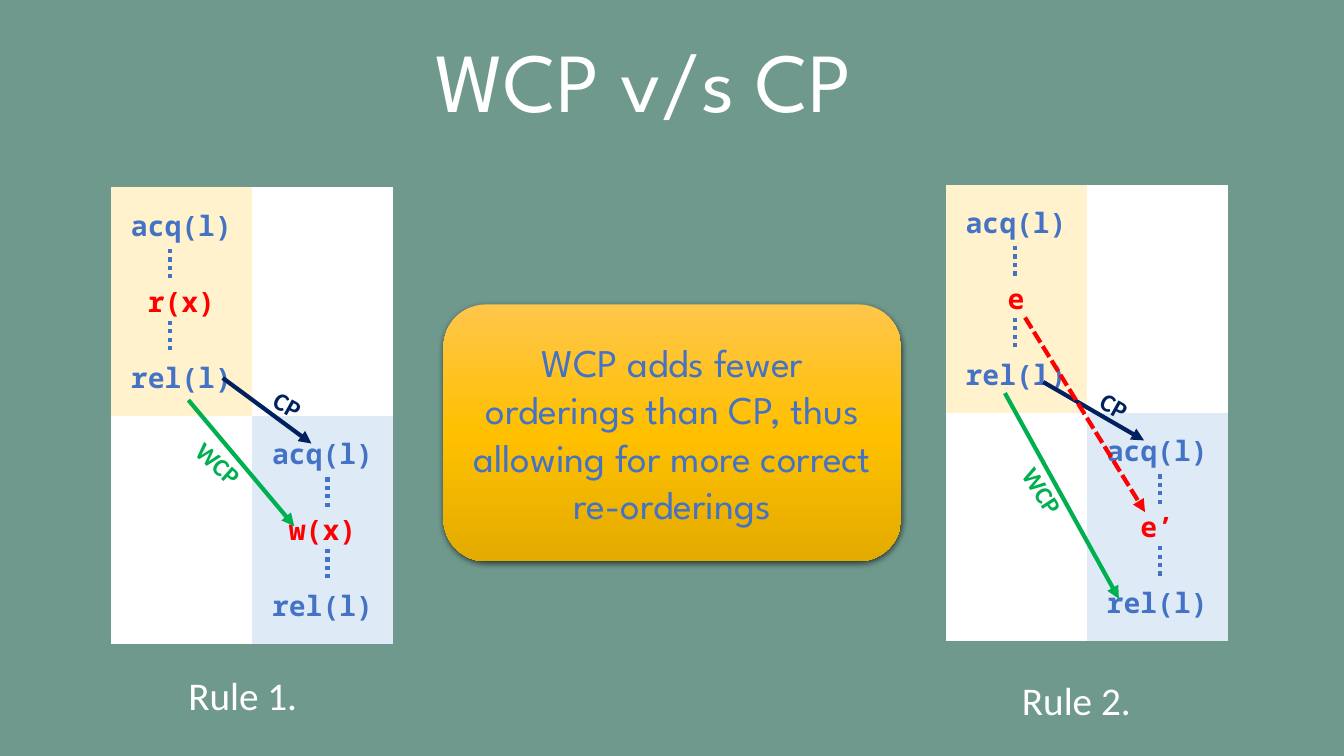
from dataclasses import dataclass

from lxml import etree
from pptx import Presentation
from pptx.dml.color import RGBColor
from pptx.enum.dml import MSO_LINE
from pptx.enum.shapes import MSO_CONNECTOR, MSO_SHAPE
from pptx.enum.text import MSO_ANCHOR, MSO_AUTO_SIZE, PP_ALIGN
from pptx.oxml import parse_xml
from pptx.oxml.ns import nsdecls, qn
from pptx.slide import Slide
from pptx.util import Pt

STRAIGHT = MSO_CONNECTOR.STRAIGHT
ROUNDED = MSO_SHAPE.ROUNDED_RECTANGLE
DOTTED, DASHED = MSO_LINE.ROUND_DOT, MSO_LINE.SQUARE_DOT
MIDDLE, CENTER = MSO_ANCHOR.MIDDLE, PP_ALIGN.CENTER
NO_FIT = MSO_AUTO_SIZE.NONE

SAGE = RGBColor(0x70, 0x99, 0x8D)
WHITE = RGBColor(0xFF, 0xFF, 0xFF)
CREAM = RGBColor(0xFF, 0xF2, 0xCC)
PALE_BLUE = RGBColor(0xDE, 0xEB, 0xF7)
BLUE = RGBColor(0x44, 0x72, 0xC4)
NAVY = RGBColor(0x00, 0x20, 0x60)
GREEN = RGBColor(0x00, 0xB0, 0x50)
RED = RGBColor(0xFF, 0x00, 0x00)

HEADING_FONT, LABEL_FONT, CODE_FONT = "League Spartan", "Calibri", "Noto Sans Mono"
COLUMN_WIDTH, ROW_HEIGHT = 100.8, 54.36
DOTS_TOP, DOTS_STEP, DOTS_LENGTH = 44, 51.2, 24
THREAD_ROWS = 3
NO_GRID_STYLE = "{2D5ABB26-0587-4C30-8999-92F81FD0307C}"


@dataclass
class Arrow:
    start: tuple[float, float]
    end: tuple[float, float]
    color: RGBColor
    dash: MSO_LINE | None = None


@dataclass
class Label:
    text: str
    left: float
    top: float
    width: float
    color: RGBColor
    size: float = 18
    height: float = 28.8
    rotation: float = 0
    bold: bool = True


@dataclass
class Rule:
    left: float
    top: float
    accesses: tuple[str, str]
    dots_x: tuple[float, float]
    arrows: list[Arrow]
    labels: list[Label]


RULES = [
    Rule(79.2, 133.9, ("r(x)", "w(x)"), (121.7, 234),
         [Arrow((134.6, 285.8), (210.2, 375.8), GREEN),
          Arrow((159.1, 270), (222.5, 316.8), NAVY)],
         [Label("WCP", 131, 317.5, 51.8, GREEN, rotation=41.4),
          Label("CP", 188.6, 275.8, 38.2, NAVY, rotation=29.2),
          Label("Rule 1.", 127.4, 475.9, 106.6, WHITE, 28, 41, bold=False)]),
    Rule(675.4, 131.8, ("e", "e’"), (725, 828.7),
         [Arrow((717.8, 280.8), (799.2, 427.7), GREEN),
          Arrow((745.2, 272.9), (817.2, 314.6), NAVY),
          Arrow((732.2, 226.8), (817.9, 365.8), RED, DASHED)],
         [Label("WCP", 719.3, 337, 51.8, GREEN, rotation=56.9),
          Label("CP", 779, 276.5, 38.2, NAVY, rotation=29.2),
          Label("Rule 2.", 722.9, 479.5, 106.6, WHITE, 28, 41, bold=False)]),
]


def style(para, font: str, size: float, color: RGBColor, bold: bool = False) -> None:
    para.font.name, para.font.size, para.font.bold = font, Pt(size), bold
    para.font.color.rgb = color


def add_line(page: Slide, start: tuple[float, float], end: tuple[float, float],
             color: RGBColor, dash: MSO_LINE | None = None, head: bool = False) -> None:
    line = page.shapes.add_connector(STRAIGHT, *(Pt(v) for v in start + end))
    line.line.color.rgb, line.line.width = color, Pt(3)
    if dash is not None:
        line.line.dash_style = dash
    if head:
        etree.SubElement(line.line._get_or_add_ln(), qn("a:tailEnd"), type="triangle")
    etree.SubElement(line._element.spPr, qn("a:effectLst"))


def add_label(page: Slide, label: Label) -> None:
    box = page.shapes.add_textbox(
        Pt(label.left), Pt(label.top), Pt(label.width), Pt(label.height))
    box.rotation = label.rotation
    box.text_frame.word_wrap = False
    para = box.text_frame.paragraphs[0]
    para.text = label.text
    style(para, LABEL_FONT, label.size, label.color, label.bold)


def add_trace(page: Slide, rule: Rule) -> None:
    row_count = 2 * THREAD_ROWS
    frame = page.shapes.add_table(row_count, 2, Pt(rule.left), Pt(rule.top),
                                  Pt(2 * COLUMN_WIDTH), Pt(row_count * ROW_HEIGHT))
    table = frame.table
    table.first_row = table.horz_banding = False
    table._tbl.tblPr.find(qn("a:tableStyleId")).text = NO_GRID_STYLE
    for column in table.columns:
        column.width = Pt(COLUMN_WIDTH)
    for index, row in enumerate(table.rows):
        row.height = Pt(ROW_HEIGHT)
        thread, step = divmod(index, THREAD_ROWS)
        for column, cell in enumerate(row.cells):
            cell.fill.solid()
            cell.fill.fore_color.rgb = WHITE
            if column != thread:
                continue
            cell.fill.fore_color.rgb = (CREAM, PALE_BLUE)[thread]
            cell.vertical_anchor = MIDDLE
            para = cell.text_frame.paragraphs[0]
            para.text = ("acq(l)", rule.accesses[thread], "rel(l)")[step]
            para.alignment = CENTER
            style(para, CODE_FONT, 20, RED if step == 1 else BLUE, True)


def add_rule(page: Slide, rule: Rule) -> None:
    add_trace(page, rule)
    # Dots between the events of each thread
    for thread, x in enumerate(rule.dots_x):
        for gap in range(THREAD_ROWS - 1):
            y = rule.top + DOTS_TOP + thread * THREAD_ROWS * ROW_HEIGHT + gap * DOTS_STEP
            add_line(page, (x, y), (x, y + DOTS_LENGTH), BLUE, DOTTED)
    # Orderings and captions
    for arrow in rule.arrows:
        add_line(page, arrow.start, arrow.end, arrow.color, arrow.dash, head=True)
    for label in rule.labels:
        add_label(page, label)


def add_title(page: Slide) -> None:
    title = page.shapes.title
    title.left, title.top, title.width, title.height = Pt(46), Pt(8.6), Pt(828), Pt(104.4)
    title.text_frame.auto_size = NO_FIT
    title.text_frame.vertical_anchor = MIDDLE
    para = title.text_frame.paragraphs[0]
    para.text = "WCP v/s CP"
    para.alignment, para.line_spacing = CENTER, 0.9
    style(para, HEADING_FONT, 60, WHITE)


def add_takeaway(page: Slide) -> None:
    box = page.shapes.add_shape(ROUNDED, Pt(316.8), Pt(217.4), Pt(326.9), Pt(183.6))
    box.line.fill.background()
    properties = box._element.spPr
    outline = properties.find(qn("a:ln"))
    outline.addprevious(parse_xml(
        f'<a:gradFill {nsdecls("a")} rotWithShape="1"><a:gsLst>'
        '<a:gs pos="0"><a:srgbClr val="FFC64B"/></a:gs>'
        '<a:gs pos="50000"><a:srgbClr val="FFC000"/></a:gs>'
        '<a:gs pos="100000"><a:srgbClr val="E3AB00"/></a:gs>'
        '</a:gsLst><a:lin ang="5400000" scaled="0"/></a:gradFill>'))
    outline.addnext(parse_xml(
        f'<a:effectLst {nsdecls("a")}><a:outerShdw blurRad="{Pt(4.5)}" dist="{Pt(1.5)}" '
        'dir="5400000" algn="ctr" rotWithShape="0"><a:srgbClr val="000000">'
        '<a:alpha val="63000"/></a:srgbClr></a:outerShdw></a:effectLst>'))
    frame = box.text_frame
    frame.word_wrap, frame.vertical_anchor = True, MIDDLE
    para = frame.paragraphs[0]
    para.text = ("WCP adds fewer orderings than CP, "
                 "thus allowing for more correct re-orderings")
    para.alignment = CENTER
    style(para, HEADING_FONT, 28, BLUE)


def main() -> None:
    deck = Presentation()
    deck.slide_width, deck.slide_height = Pt(960), Pt(540)
    page = deck.slides.add_slide(deck.slide_layouts.get_by_name("Title Only"))
    page.background.fill.solid()
    page.background.fill.fore_color.rgb = SAGE
    add_title(page)
    for rule in RULES:
        add_rule(page, rule)
    add_takeaway(page)
    deck.save("out.pptx")


if __name__ == "__main__":
    main()
